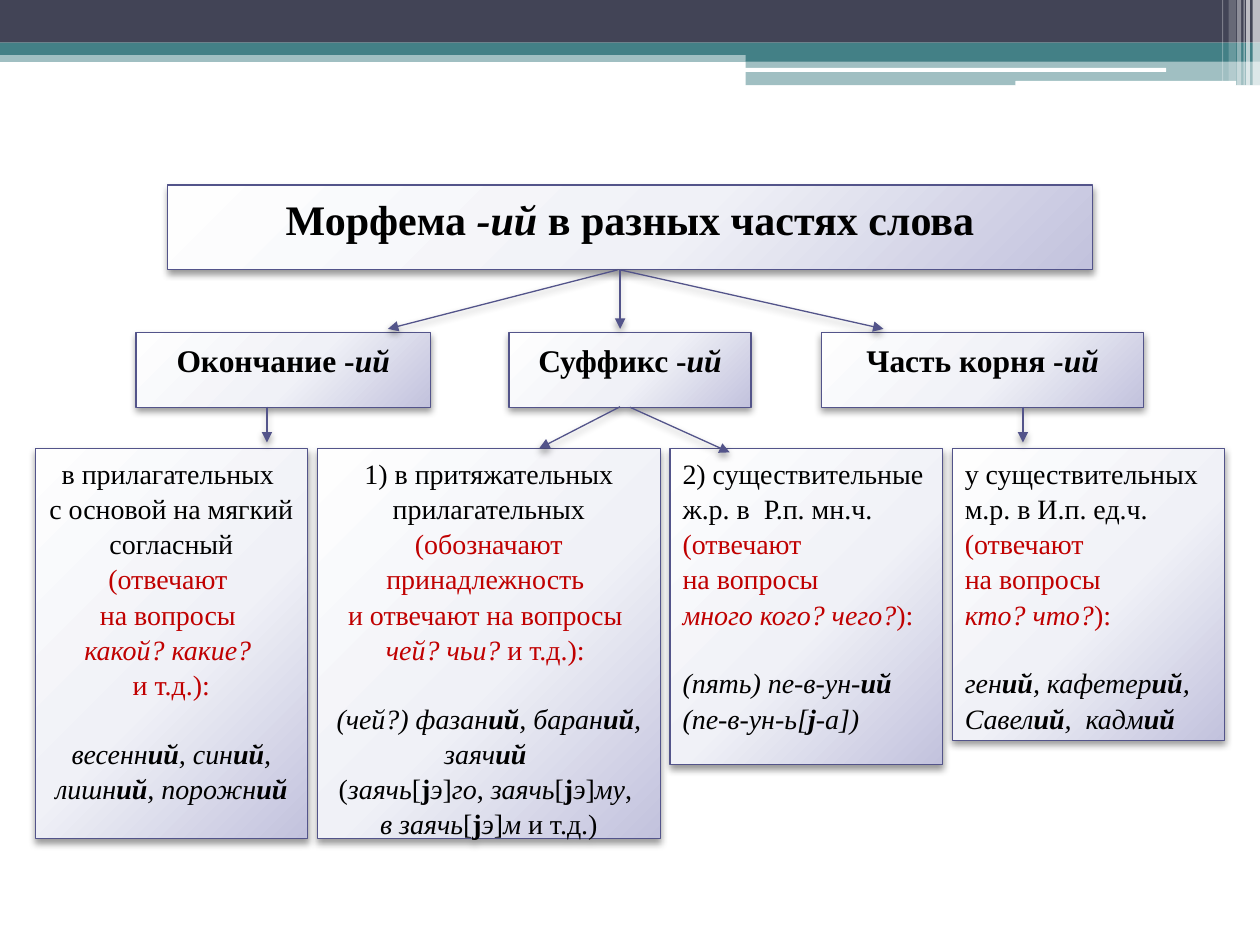
from dataclasses import dataclass

from pptx import Presentation
from pptx import util as u
from pptx.dml.color import RGBColor
from pptx.enum import shapes, text
from pptx.oxml import parse_xml
from pptx.oxml.ns import nsdecls, qn
from pptx.util import Cm

NAVY = RGBColor(0x42, 0x44, 0x56)
TEAL = RGBColor(0x43, 0x80, 0x86)
WHITE = RGBColor(0xFF, 0xFF, 0xFF)
BLACK = RGBColor(0x00, 0x00, 0x00)
RED = RGBColor(0xC0, 0x00, 0x00)
VIOLET = RGBColor(0x53, 0x54, 0x8A)
GRADIENT = ((0, "FEFEFE"), (55, "F0F1F7"), (100, "C2C2DD"))

FONT = "Times New Roman"
LINE_SPACING = 1.05
WIDTH = 25.4
CENTER, LEFT = text.PP_ALIGN.CENTER, text.PP_ALIGN.LEFT
RECTANGLE = shapes.MSO_SHAPE.RECTANGLE
ROUNDED = shapes.MSO_SHAPE.ROUNDED_RECTANGLE


@dataclass
class Band:
    left: float
    top: float
    width: float
    height: float
    color: RGBColor
    opacity: int = 100
    kind: int = RECTANGLE


@dataclass
class Box:
    """Text uses toggles: * italic, # bold, ~ red; a leading ^ leaves a line above."""
    left: float
    top: float
    width: float
    height: float
    size: int
    paragraphs: tuple[str, ...]
    alignment: int = CENTER


@dataclass
class Arrow:
    start: tuple[float, float]
    end: tuple[float, float]


BANDS = (
    Band(0, 1.02, WIDTH, 0.23, TEAL, 50),
    Band(0, 0, WIDTH, 0.86, NAVY),
    Band(0, 0.86, WIDTH, 0.25, TEAL),
    Band(15.03, 0.99, 10.37, 0.25, TEAL),
    Band(15.03, 1.22, 10.37, 0.5, TEAL, 50),
    Band(15.01, 1.37, 8.5, 0.08, WHITE, kind=ROUNDED),
    Band(20.47, 1.63, 4.45, 0.1, WHITE, kind=ROUNDED),
    Band(25.25, 0, 0.15, 1.73, WHITE, 65),
    Band(25.12, 0, 0.08, 1.73, WHITE, 65),
    Band(25.07, 0, 0.02, 1.73, WHITE, 60),
    Band(24.94, 0, 0.08, 1.73, WHITE, 40),
    Band(24.77, 0, 0.15, 1.63, WHITE, 20),
    Band(24.64, 0, 0.02, 1.63, WHITE, 30),
)

TITLE = Box(3.38, 3.73, 18.64, 1.7, 24, ("#Морфема *-ий* в разных частях слова",))

# left, width, text
MORPHEMES = (
    (2.74, 5.94, "#Окончание -*ий"),
    (10.26, 4.88, "#Суффикс -*ий"),
    (16.56, 6.5, "#Часть корня -*ий"),
)
MORPHEME_TOP, MORPHEME_HEIGHT = 6.71, 1.5

# width, height, alignment, paragraphs
DETAILS = (
    (5.49, 7.87, CENTER, (
        "в прилагательных ",
        "с основой на мягкий согласный ~(отвечают ",
        "~на вопросы ",
        "~*какой? какие? ",
        "~и т.д.):",
        "^*весенн#ий#, син#ий#, лишн#ий#, порожн#ий",
    )),
    (6.91, 7.87, CENTER, (
        "1) в притяжательных прилагательных ~(обозначают принадлежность ",
        "~и отвечают на вопросы ",
        "~*чей? чьи?* и т.д.): ",
        "^*(чей?) фазан#ий#, баран#ий#, заяч#ий ",
        "(*заячь*[#j#*э*]*го*, *заячь*[#j#*э*]*му*, ",
        "*в заячь*[#j#*э*]*м* и т.д.)",
    )),
    (5.49, 6.38, LEFT, (
        "2) существительные ж.р. в  Р.п. мн.ч. ~(отвечают",
        "~на вопросы",
        "~*много кого? чего?*):",
        "^*(пять) пе-в-ун-#ий",
        "*(пе-в-ун-ь[#j#-а])",
    )),
    (5.49, 5.89, LEFT, (
        "у существительных м.р. в И.п. ед.ч. ~(отвечают",
        "~на вопросы",
        "~*кто? что?*):",
        "^*ген#ий#, кафетер#ий#, Савел#ий#,  кадм#ий",
    )),
)
DETAIL_LEFT, DETAIL_TOP, DETAIL_GAP = 0.71, 9.04, 0.2

ARROWS = (
    Arrow((12.45, 5.44), (7.82, 6.63)),
    Arrow((12.5, 5.44), (17.81, 6.63)),
    Arrow((12.5, 5.44), (12.5, 6.63)),
    Arrow((5.38, 8.2), (5.38, 8.92)),
    Arrow((12.5, 8.2), (10.87, 9.04)),
    Arrow((20.62, 8.2), (20.62, 8.92)),
)
SUFFIX_ARROW = Arrow((12.7, 8.21), (14.71, 9.12))


def add_shadow(properties) -> None:
    for effects in properties.findall(qn("a:effectLst")):
        properties.remove(effects)
    properties.append(parse_xml(
        f'<a:effectLst {nsdecls("a")}><a:outerShdw blurRad="{u.Pt(4.1)}" dist="{u.Pt(2)}" '
        'dir="5400000" rotWithShape="0"><a:srgbClr val="000000"><a:alpha val="40000"/>'
        '</a:srgbClr></a:outerShdw></a:effectLst>'))


def add_band(slide, band: Band) -> None:
    shape = slide.shapes.add_shape(
        band.kind, Cm(band.left), Cm(band.top), Cm(band.width), Cm(band.height))
    shape.shadow.inherit = False
    shape.line.fill.background()
    shape.fill.solid()
    shape.fill.fore_color.rgb = band.color
    if band.opacity < 100:
        color = shape._element.spPr.find(qn("a:solidFill"))[0]
        color.append(parse_xml(f'<a:alpha {nsdecls("a")} val="{band.opacity * 1000}"/>'))


def fill_gradient(shape) -> None:
    shape.fill.background()
    properties = shape._element.spPr
    stops = "".join(f'<a:gs pos="{position * 1000}"><a:srgbClr val="{color}"/></a:gs>'
                    for position, color in GRADIENT)
    properties.replace(properties.find(qn("a:noFill")), parse_xml(
        f'<a:gradFill {nsdecls("a")} rotWithShape="1"><a:gsLst>{stops}</a:gsLst>'
        '<a:path path="circle"><a:fillToRect l="-40000" t="-90000" r="140000" b="190000"/>'
        '</a:path></a:gradFill>'))


def write_runs(paragraph, markup: str, size: int) -> None:
    active = {"*": False, "#": False, "~": False}
    pending = ""
    for character in markup + "*":
        if character not in active:
            pending += character
            continue
        if pending:
            run = paragraph.add_run()
            run.text = pending
            run.font.name, run.font.size = FONT, u.Pt(size)
            run.font.italic, run.font.bold = active["*"], active["#"]
            run.font.color.rgb = RED if active["~"] else BLACK
            pending = ""
        active[character] = not active[character]


def add_box(slide, box: Box):
    shape = slide.shapes.add_shape(
        RECTANGLE, Cm(box.left), Cm(box.top), Cm(box.width), Cm(box.height))
    fill_gradient(shape)
    shape.line.color.rgb = VIOLET
    shape.line.width = u.Pt(0.75)
    add_shadow(shape._element.spPr)
    frame = shape.text_frame
    frame.word_wrap = True
    frame.vertical_anchor = text.MSO_ANCHOR.TOP
    for index, markup in enumerate(box.paragraphs):
        paragraph = frame.add_paragraph() if index else frame.paragraphs[0]
        paragraph.alignment = box.alignment
        paragraph.line_spacing = LINE_SPACING
        if markup.startswith("^"):
            paragraph.space_before = u.Pt(box.size * 1.2)
        write_runs(paragraph, markup.lstrip("^"), box.size)
    return shape


def add_arrow(slide, arrow: Arrow):
    connector = slide.shapes.add_connector(
        shapes.MSO_CONNECTOR.STRAIGHT, *map(Cm, arrow.start + arrow.end))
    connector.line.color.rgb = VIOLET
    connector.line.width = u.Pt(0.75)
    properties = connector._element.spPr
    properties.find(qn("a:ln")).append(parse_xml(f'<a:tailEnd {nsdecls("a")} type="triangle"/>'))
    add_shadow(properties)
    return connector


def main() -> None:
    presentation = Presentation()
    presentation.slide_width, presentation.slide_height = Cm(WIDTH), Cm(19.05)
    slide = presentation.slides.add_slide(presentation.slide_layouts[6])
    for band in BANDS:
        add_band(slide, band)
    add_box(slide, TITLE)
    morphemes = [add_box(slide, Box(left, MORPHEME_TOP, width, MORPHEME_HEIGHT, 18, (label,)))
                 for left, width, label in MORPHEMES]
    left = DETAIL_LEFT
    for width, height, alignment, paragraphs in DETAILS:
        add_box(slide, Box(left, DETAIL_TOP, width, height, 16, paragraphs, alignment))
        left += width + DETAIL_GAP
    for arrow in ARROWS:
        add_arrow(slide, arrow)
    add_arrow(slide, SUFFIX_ARROW).begin_connect(morphemes[1], 2)
    presentation.save("out.pptx")


if __name__ == "__main__":
    main()
